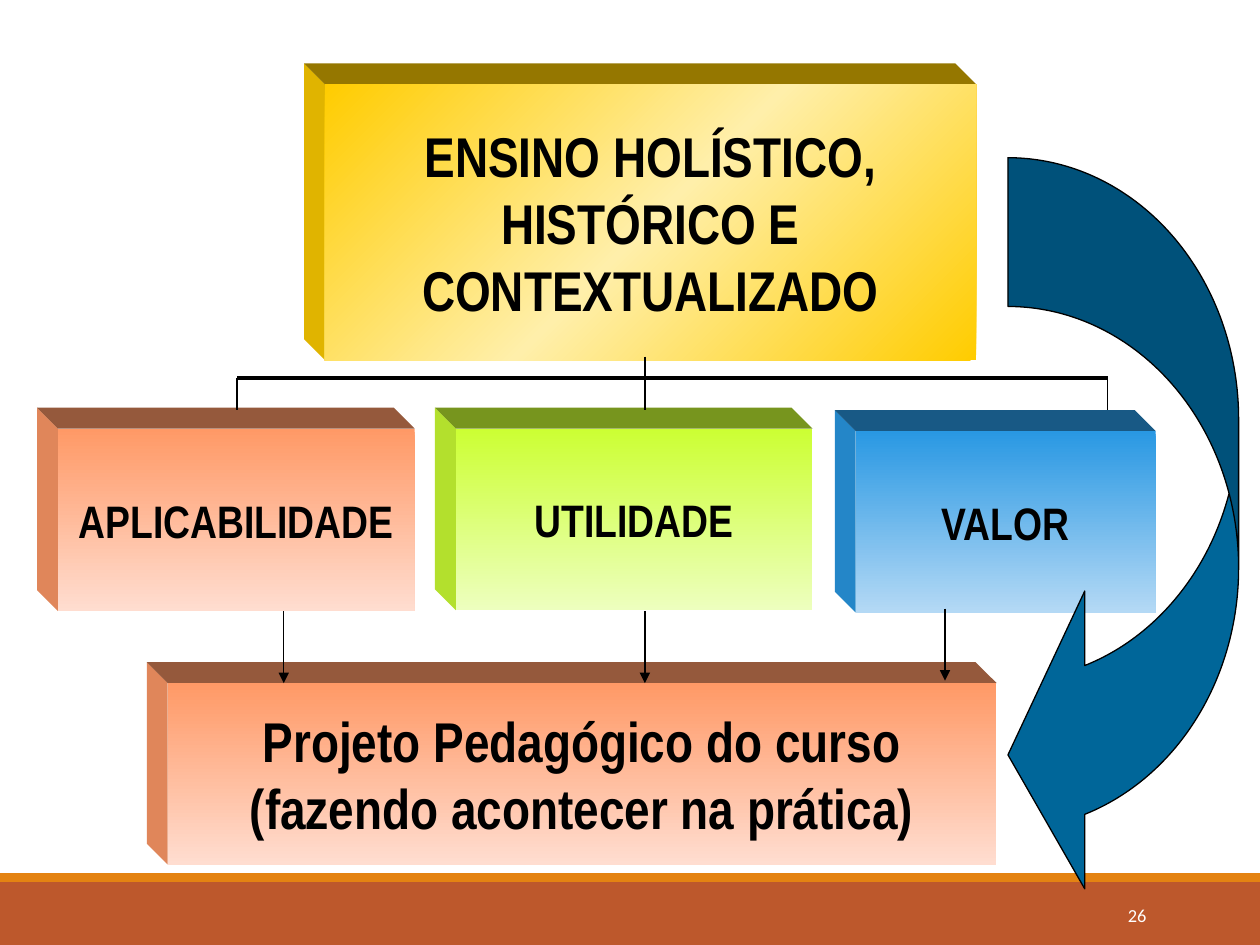
from lxml import etree
from pptx import Presentation, util as u
from pptx.dml.color import RGBColor
from pptx.enum import shapes, text
from pptx.oxml.ns import qn

# Content: lengths in cm
BARS = [((0, 17.78, 25.4, 1.27), "BD582C"), ((0, 17.6, 25.4, 0.18), "E48312")]
DEPTH = 0.42
GOLD = dict(stops=["FFCC00", "FFEFAA", "FFCC00"], angle=45, side="E0B400", top="957700")
CORAL = dict(stops=["FF9966", "FFDDD0"], angle=90, side="E0865A", top="95593C")
LIME = dict(stops=["CCFF33", "EDFFBE"], angle=90, side="B3E02D", top="77951E")
BLUE = dict(stops=["2998E3", "B4D9F5"], angle=90, side="2486C8", top="185985")
BLOCKS = [
    (["ENSINO HOLÍSTICO, HISTÓRICO E CONTEXTUALIZADO"], 32, (6.55, 1.7, 13.13, 5.56), GOLD),
    (["APLICABILIDADE"], 26, (1.17, 8.64, 7.19, 3.68), CORAL),
    (["UTILIDADE"], 26, (9.19, 8.64, 7.19, 3.66), LIME),
    (["VALOR"], 26, (17.25, 8.69, 6.05, 3.66), BLUE),
    (["Projeto Pedagógico do curso", "(fazendo acontecer na prática)"], 32,
     (3.38, 13.77, 16.71, 3.66), CORAL),
]
LEFT, MID, RIGHT, RAIL, DROP = 4.78, 13, 22.33, 7.62, 8.26
TREE = [((LEFT, RAIL), (RIGHT, RAIL), 2.25), ((LEFT, DROP), (LEFT, RAIL), 0.75),
        ((RIGHT, DROP), (RIGHT, RAIL), 0.75), ((MID, 7.19), (MID, DROP), 0.75)]
ARROWS = [(MID, 12.32), (5.72, 12.32), (19.05, 12.27)]
FALL = 1.45
CURVE = dict(box=(20.32, 3.18, 4.65, 15.04), bends=(0.645, 1.291, 0.333))
PAGE = dict(label="26", box=(20.62, 17.93, 2.74, 1.02))

deck = Presentation()
deck.slide_width, deck.slide_height = u.Cm(25.4), u.Cm(19.05)
slide = deck.slides.add_slide(deck.slide_layouts[6])
items = slide.shapes


def hue(code):
    return RGBColor.from_string(code)


def cm(vals):
    return [u.Cm(v) for v in vals]


def paint(shape, code, edge=None):
    shape.shadow.inherit = False
    shape.fill.solid()
    shape.fill.fore_color.rgb = hue(code)
    if edge:
        shape.line.color.rgb = hue(edge)
        shape.line.width = u.Pt(0.75)
    else:
        shape.line.fill.background()


def blend(shape, stops, angle):
    """Swap the solid fill for evenly spaced gradient stops."""
    grad = etree.Element(qn("a:gradFill"), rotWithShape="1")
    group = etree.SubElement(grad, qn("a:gsLst"))
    for i, code in enumerate(stops):
        stop = etree.SubElement(group, qn("a:gs"), pos=str(i * 100000 // (len(stops) - 1)))
        etree.SubElement(stop, qn("a:srgbClr"), val=code)
    etree.SubElement(grad, qn("a:lin"), ang=str(angle * 60000), scaled="0")
    props = shape.fill._xPr
    props.replace(props.find(qn("a:solidFill")), grad)


def write(shape, lines, align, code, **font):
    frame = shape.text_frame
    frame.word_wrap = True
    frame.vertical_anchor = text.MSO_ANCHOR.MIDDLE
    for i, line in enumerate(lines):
        para = frame.paragraphs[0] if i == 0 else frame.add_paragraph()
        para.alignment = align
        run = para.add_run()
        run.text = line
        run.font.color.rgb = hue(code)
        for name, value in font.items():
            setattr(run.font, name, value)


def face(points, code):
    pen = items.build_freeform(*cm(points[0]), scale=1.0)
    pen.add_line_segments([cm(p) for p in points[1:]], close=True)
    paint(pen.convert_to_shape(), code)


def block(lines, size, box, look):
    x, y, w, h = box
    back = (x - DEPTH, y - DEPTH)
    face([back, (x, y), (x, y + h), (x - DEPTH, y + h - DEPTH)], look["side"])
    face([back, (x + w - DEPTH, y - DEPTH), (x + w, y), (x, y)], look["top"])
    front = items.add_shape(shapes.MSO_SHAPE.RECTANGLE, *cm(box))
    paint(front, look["top"])
    blend(front, look["stops"], look["angle"])
    write(front, lines, text.PP_ALIGN.CENTER, "000000",
          name="Arial Narrow", size=u.Pt(size), bold=True)


def link(start, end, width, head=False):
    line = items.add_connector(shapes.MSO_CONNECTOR.STRAIGHT, *cm(start + end))
    line.line.color.rgb = hue("000000")
    line.line.width = u.Pt(width)
    if head:
        etree.SubElement(line.line._get_or_add_ln(), qn("a:tailEnd"), type="triangle")
    etree.SubElement(line._element.spPr, qn("a:effectLst"))


# Footer bars and page number
for box, code in BARS:
    paint(items.add_shape(shapes.MSO_SHAPE.RECTANGLE, *cm(box)), code)
page = items.add_textbox(*cm(PAGE["box"]))
write(page, [PAGE["label"]], text.PP_ALIGN.RIGHT, "FFFFFF", name="Calibri", size=u.Pt(10.5))

# Raised blocks
for entry in BLOCKS:
    block(*entry)

# Tree lines
for entry in TREE:
    link(*entry)

# Curved arrow
curve = items.add_shape(shapes.MSO_SHAPE.CURVED_LEFT_ARROW, *cm(CURVE["box"]))
for i, bend in enumerate(CURVE["bends"]):
    curve.adjustments[i] = bend
paint(curve, "006699", "000000")

# Arrows down to the course project
for x, y in ARROWS:
    link((x, y), (x, y + FALL), 0.75, head=True)

deck.save("out.pptx")
